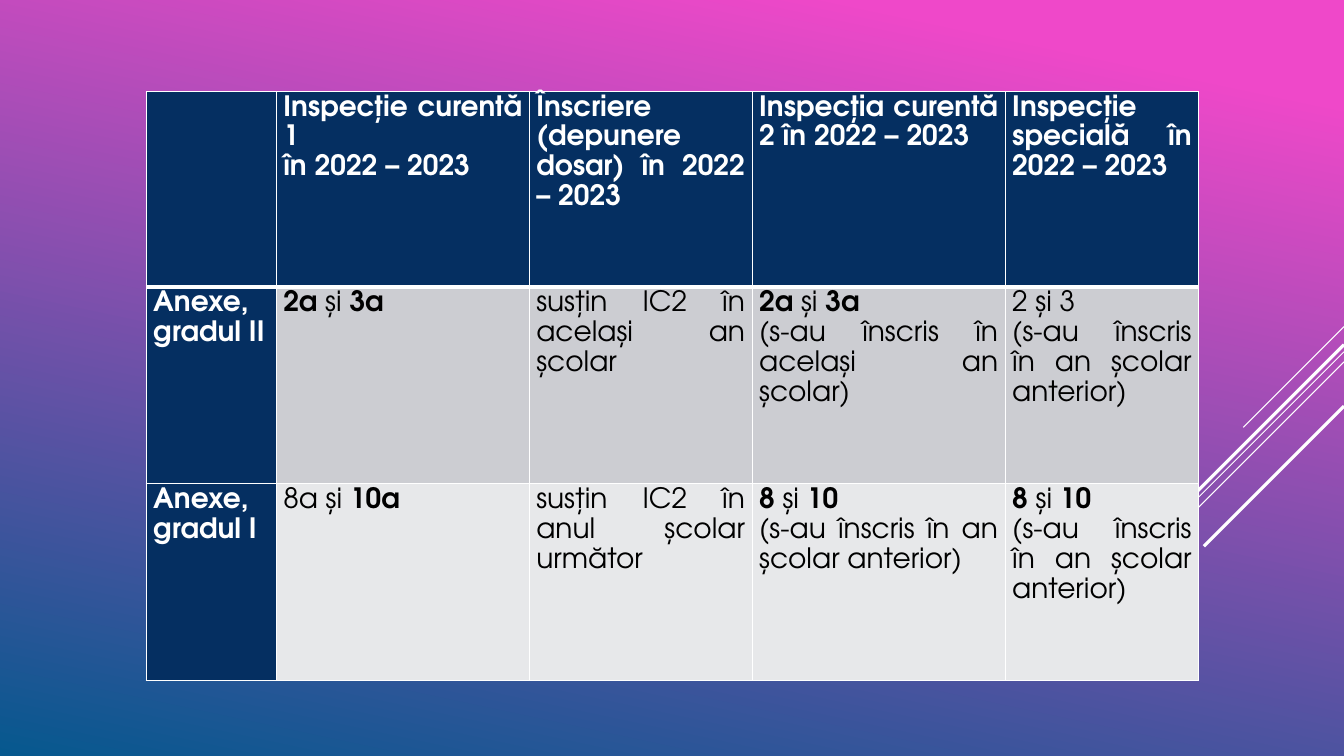
from lxml import etree
from pptx import Presentation
from pptx.dml.color import RGBColor
from pptx.enum.shapes import MSO_CONNECTOR
from pptx.enum.text import PP_ALIGN
from pptx.oxml.ns import qn
from pptx.util import Inches, Pt

WHITE = RGBColor(0xFF, 0xFF, 0xFF)
BLACK = RGBColor(0x00, 0x00, 0x00)
NAVY = RGBColor(0x05, 0x2F, 0x61)
GREY = RGBColor(0xCC, 0xCD, 0xD2)
LIGHT_GREY = RGBColor(0xE7, 0xE8, 0xEA)
PINK = RGBColor(0xEF, 0x48, 0xC9)
BLUE = RGBColor(0x06, 0x58, 0x8E)
FONT = "TeX Gyre Adventor"

# One string per cell: line breaks separate paragraphs, asterisks enclose bold text.
ROWS = [
    ["",
     "*Inspecție curentă 1*\n*în 2022 – 2023*",
     "*Înscriere (depunere dosar) în 2022 – 2023*",
     "*Inspecția curentă 2 în 2022 – 2023*",
     "*Inspecție specială în 2022 – 2023*"],
    ["*Anexe, gradul II*",
     "*2a* și *3a*",
     "susțin IC2 în același an școlar",
     "*2a* și *3a*\n(s-au înscris în același an școlar)",
     "2 și 3\n(s-au înscris în an școlar anterior)"],
    ["*Anexe, gradul I*",
     "8a și *10a*",
     "susțin IC2 în anul școlar următor",
     "*8* și *10*\n(s-au înscris în an școlar anterior)",
     "*8* și *10*\n(s-au înscris în an școlar anterior)"],
]
COL_WIDTHS = [1.29, 2.51, 2.21, 2.51, 1.92]
ROW_HEIGHTS = [1.94, 1.95, 1.95]
BODY_FILLS = [NAVY, GREY, LIGHT_GREY]

# Diagonals at 45 degrees from the right edge: start height, run, line width.
DIAGONALS = [(3.24, 1, 0.75), (3.49, 3.26, 0.75), (3.59, 2.07, 0.75),
             (3.42, 1.91, 2.25), (4.03, 1.39, 2.25)]
SLIDE_W, SLIDE_H = 13.33, 7.5


def paint_background(slide):
    fill = slide.background.fill
    fill.gradient()
    fill.gradient_angle = 258
    for stop, color, position in zip(fill.gradient_stops, (PINK, BLUE), (0.1, 1)):
        stop.color.rgb = color
        stop.position = position


def add_diagonal(slide, top, run, width):
    line = slide.shapes.add_connector(
        MSO_CONNECTOR.STRAIGHT, Inches(SLIDE_W), Inches(top),
        Inches(SLIDE_W - run), Inches(top + run))
    line.line.color.rgb = WHITE
    line.line.width = Pt(width)
    etree.SubElement(line._element.spPr, qn("a:effectLst"))


def set_borders(cell, top, bottom):
    tcPr = cell._tc.get_or_add_tcPr()
    for side, width in (("L", 1), ("R", 1), ("T", top), ("B", bottom)):
        ln = etree.SubElement(tcPr, qn(f"a:ln{side}"), w=str(Pt(width)))
        solid = etree.SubElement(ln, qn("a:solidFill"))
        etree.SubElement(solid, qn("a:srgbClr"), val=str(WHITE))


def write_cell(cell, text, color):
    cell.margin_left = cell.margin_right = Inches(0.07)
    cell.margin_top = cell.margin_bottom = 0
    tf = cell.text_frame
    tf.text = text.replace("*", "") and "\n" * text.count("\n")
    for p, line in zip(tf.paragraphs, text.split("\n")):
        p.alignment = PP_ALIGN.JUSTIFY
        p.line_spacing = 1.15
        p.font.size = Pt(20)
        for i, part in enumerate(line.split("*")):
            if part:
                r = p.add_run()
                r.text = part
                r.font.name = FONT
                r.font.size = Pt(20)
                r.font.bold = i % 2 == 1
                r.font.color.rgb = color


def add_inspection_table(slide):
    table = slide.shapes.add_table(
        len(ROWS), len(COL_WIDTHS), Inches(1.45), Inches(0.91),
        Inches(sum(COL_WIDTHS)), Inches(sum(ROW_HEIGHTS))).table
    for column, width in zip(table.columns, COL_WIDTHS):
        column.width = Inches(width)
    for row, height in zip(table.rows, ROW_HEIGHTS):
        row.height = Inches(height)
    for i, texts in enumerate(ROWS):
        for j, text in enumerate(texts):
            cell = table.cell(i, j)
            heading = i == 0 or j == 0
            set_borders(cell, 3 if i == 1 else 1, 3 if i == 0 else 1)
            cell.fill.solid()
            cell.fill.fore_color.rgb = NAVY if heading else BODY_FILLS[i]
            write_cell(cell, text, WHITE if heading else BLACK)


def main():
    prs = Presentation()
    prs.slide_width, prs.slide_height = Inches(SLIDE_W), Inches(SLIDE_H)
    slide = prs.slides.add_slide(prs.slide_layouts[6])
    paint_background(slide)
    for diagonal in DIAGONALS:
        add_diagonal(slide, *diagonal)
    add_inspection_table(slide)
    prs.save("out.pptx")


if __name__ == "__main__":
    main()
